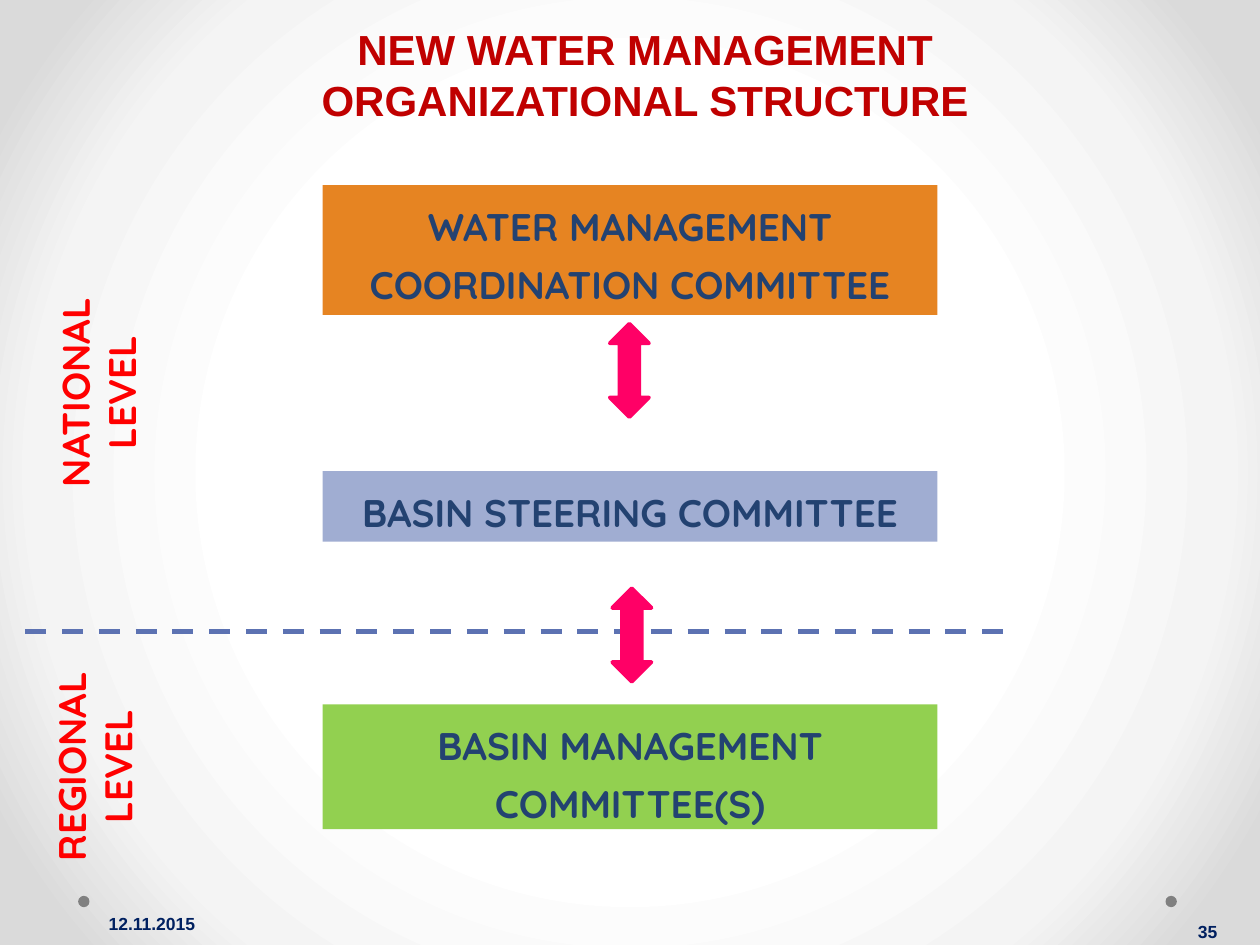
import pptx
import pptx.util
import pptx.dml.color
import pptx.enum.dml
import pptx.enum.shapes
import pptx.enum.text
import pptx.oxml
import pptx.oxml.ns

Inches, Pt = pptx.util.Inches, pptx.util.Pt
RGBColor = pptx.dml.color.RGBColor
SHAPE = pptx.enum.shapes.MSO_SHAPE
ANCHOR = pptx.enum.text.MSO_ANCHOR
AUTO_SIZE = pptx.enum.text.MSO_AUTO_SIZE
CENTER = pptx.enum.text.PP_ALIGN.CENTER
qn = pptx.oxml.ns.qn

DARK_RED = RGBColor(0xC0, 0x00, 0x00)
RED = RGBColor(0xFF, 0x00, 0x00)
PINK = RGBColor(0xFF, 0x00, 0x66)
ORANGE = RGBColor(0xE6, 0x84, 0x22)
LAVENDER = RGBColor(0xA0, 0xAD, 0xD2)
GREEN = RGBColor(0x92, 0xD0, 0x50)
BOX_TEXT = RGBColor(0x23, 0x42, 0x71)
DIVIDER_BLUE = RGBColor(0x5C, 0x72, 0xB2)
NAVY = RGBColor(0x00, 0x20, 0x60)
GRAY = RGBColor(0x80, 0x80, 0x80)
BACKGROUND_STOPS = [(50, "FFFFFF"), (76, "F4F4F4"), (92, "DADADA")]


def inches(box):
    return [Inches(length) for length in box]


def write(frame, lines, font_name, size, color, line_spacing=None):
    frame.word_wrap = True
    frame.text = "\n".join(lines)
    for paragraph in frame.paragraphs:
        paragraph.alignment = CENTER
        if line_spacing:
            paragraph.line_spacing = line_spacing
        font = paragraph.font
        font.name, font.size, font.bold = font_name, Pt(size), True
        font.color.rgb = color


def set_background(slide):
    slide.background.fill.gradient()
    gradient = next(slide.element.iter(qn("a:gradFill")))
    stops = "".join(
        f'<a:gs pos="{position * 1000}"><a:srgbClr val="{color}"/></a:gs>'
        for position, color in BACKGROUND_STOPS)
    radial = pptx.oxml.parse_xml(
        '<a:gradFill xmlns:a="http://schemas.openxmlformats.org/drawingml/2006/main"'
        f' rotWithShape="1"><a:gsLst>{stops}</a:gsLst><a:path path="circle">'
        '<a:fillToRect l="50000" t="50000" r="50000" b="50000"/></a:path></a:gradFill>')
    gradient.getparent().replace(gradient, radial)


def add_solid(slide, preset, box, color):
    solid = slide.shapes.add_shape(preset, *inches(box))
    solid.shadow.inherit = False
    solid.fill.solid()
    solid.fill.fore_color.rgb = color
    solid.line.fill.background()
    return solid


def set_title(slide, box):
    title = slide.shapes.title
    title.left, title.top, title.width, title.height = inches(box)
    frame = title.text_frame
    write(frame, ["NEW WATER MANAGEMENT\vORGANIZATIONAL STRUCTURE"],
          "Arial", 24, DARK_RED)
    frame.vertical_anchor = ANCHOR.BOTTOM
    frame.auto_size = AUTO_SIZE.NONE


def add_committee(slide, box, name, color):
    committee = add_solid(slide, SHAPE.RECTANGLE, box, color)
    frame = committee.text_frame
    write(frame, [name], "Quicksand", 22, BOX_TEXT, line_spacing=1.25)
    frame.vertical_anchor = ANCHOR.TOP
    frame.auto_size = AUTO_SIZE.SHAPE_TO_FIT_TEXT


def add_level_label(slide, box, lines):
    frame = slide.shapes.add_textbox(*inches(box)).text_frame
    write(frame, lines, "Quicksand", 22, RED)
    frame.auto_size = AUTO_SIZE.SHAPE_TO_FIT_TEXT
    frame._txBody.find(qn("a:bodyPr")).set("vert", "vert270")


def add_exchange_arrow(slide, box):
    arrow = add_solid(slide, SHAPE.UP_DOWN_ARROW, box, PINK)
    arrow.line.color.rgb = PINK
    arrow.line.width = Pt(2.25)


def add_divider(slide, left, right, y):
    divider = slide.shapes.add_connector(
        pptx.enum.shapes.MSO_CONNECTOR.STRAIGHT, *inches((left, y, right, y)))
    divider.line.color.rgb = DIVIDER_BLUE
    divider.line.width = Pt(3)
    divider.line.dash_style = pptx.enum.dml.MSO_LINE.DASH
    properties = divider._element.spPr
    properties.append(properties.makeelement(qn("a:effectLst"), {}))


def add_footer_text(slide, box, text, anchor):
    frame = slide.shapes.add_textbox(*inches(box)).text_frame
    write(frame, [text], "Arial", 10, NAVY)
    frame.vertical_anchor = anchor
    frame.margin_left = frame.margin_right = 0
    frame.margin_top = frame.margin_bottom = 0


def main():
    presentation = pptx.Presentation()
    presentation.slide_width, presentation.slide_height = Inches(10), Inches(7.5)
    slide = presentation.slides.add_slide(presentation.slide_layouts[5])
    set_background(slide)

    # Corner dots
    for left in (9.25, 0.62):
        add_solid(slide, SHAPE.OVAL, (left, 7.11, 0.09, 0.09), GRAY)

    set_title(slide, (1.46, 0.58, 7.32, 0.46))

    # Committees, from national to regional
    committees = [
        (1.47, 1.03, "WATER MANAGEMENT COORDINATION COMMITTEE", ORANGE),
        (3.74, 0.56, "BASIN STEERING COMMITTEE", LAVENDER),
        (5.59, 0.99, "BASIN MANAGEMENT COMMITTEE(S)", GREEN),
    ]
    for top, height, name, color in committees:
        add_committee(slide, (2.56, top, 4.88, height), name, color)

    # Levels and the line between them
    add_divider(slide, 0.2, 7.99, 5.01)
    add_level_label(slide, (0.36, 1.7, 0.94, 2.83), ["NATIONAL", "LEVEL"])
    add_level_label(slide, (0.33, 5.03, 0.94, 2.11), ["REGIONAL LEVEL"])

    # Exchange between committees
    for left, top in ((4.84, 2.57), (4.86, 4.67)):
        add_exchange_arrow(slide, (left, top, 0.31, 0.74))

    # Date and slide number
    add_footer_text(slide, (0.04, 7.13, 2.33, 0.4), "12.11.2015", ANCHOR.MIDDLE)
    add_footer_text(slide, (9.17, 7.08, 0.83, 0.4), "35", ANCHOR.BOTTOM)

    presentation.save("out.pptx")


if __name__ == "__main__":
    main()
